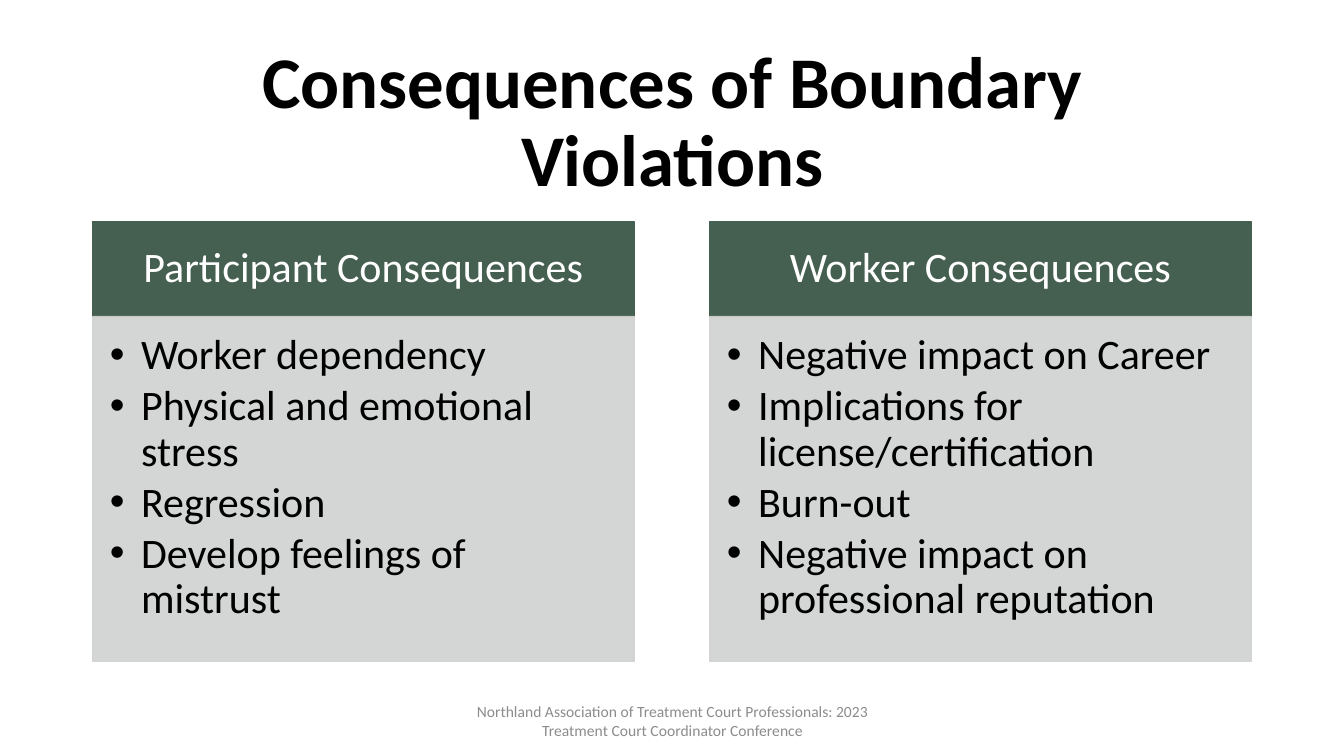
from dataclasses import dataclass

from lxml.etree import SubElement
from pptx import Presentation
from pptx.dml.color import RGBColor as Rgb
from pptx.enum.shapes import MSO_SHAPE as Shape
from pptx.enum.text import MSO_ANCHOR as Anchor, MSO_AUTO_SIZE as AutoSize, PP_ALIGN as Align
from pptx.oxml.ns import qn
from pptx.util import Emu, Pt

EMU_PER_PX = 9144  # 100 px to the inch


@dataclass(frozen=True)
class Theme:
    font: str = "Calibri"
    ink: Rgb = Rgb(0x00, 0x00, 0x00)
    header_ink: Rgb = Rgb(0xFF, 0xFF, 0xFF)
    footer_ink: Rgb = Rgb(0x8C, 0x8C, 0x8C)
    header_fill: Rgb = Rgb(0x45, 0x5F, 0x51)
    body_fill: Rgb = Rgb(0xCF, 0xD2, 0xD0)
    body_opacity: int = 90
    title_size: float = 52
    column_size: float = 30
    footer_size: float = 11.1


THEME = Theme()

TITLE = "Consequences of Boundary Violations"
FOOTER = "Northland Association of Treatment Court Professionals: 2023 Treatment Court Coordinator Conference"
COLUMNS = [
    ("Participant Consequences", [
        "Worker dependency",
        "Physical and emotional stress",
        "Regression",
        "Develop feelings of mistrust",
    ]),
    ("Worker Consequences", [
        "Negative impact on Career",
        "Implications for license/certification",
        "Burn-out",
        "Negative impact on professional reputation",
    ]),
]

COLUMN_LEFT, COLUMN_TOP, COLUMN_WIDTH, COLUMN_GAP = 92, 220, 537, 75
HEADER_HEIGHT, BODY_HEIGHT = 94, 342
BULLET_INDENT = 31


def px(length):
    return Emu(length * EMU_PER_PX)


def write(frame, lines, size, color, align, anchor, insets, spacing=1.0, after=0, bold=False):
    """Fill a text frame with one paragraph per line; insets run left, top, right, bottom."""
    frame.text = "\n".join(lines)
    frame.word_wrap = True
    frame.auto_size = AutoSize.NONE
    frame.vertical_anchor = anchor
    frame.margin_left, frame.margin_top, frame.margin_right, frame.margin_bottom = map(px, insets)
    for paragraph in frame.paragraphs:
        paragraph.alignment = align
        paragraph.line_spacing = spacing
        paragraph.space_before = Pt(0)
        paragraph.space_after = Pt(after)
        for run in paragraph.runs:
            run.font.name = THEME.font
            run.font.size = Pt(size)
            run.font.bold = bold
            run.font.color.rgb = color


def add_bullets(frame):
    for paragraph in frame.paragraphs:
        properties = paragraph._p.get_or_add_pPr()
        properties.set("marL", str(px(BULLET_INDENT)))
        properties.set("indent", str(-px(BULLET_INDENT)))
        SubElement(properties, qn("a:buFont"), typeface="Arial")
        SubElement(properties, qn("a:buChar"), char="•")


def add_panel(slide, left, top, width, height, color, opacity=100):
    panel = slide.shapes.add_shape(Shape.RECTANGLE, px(left), px(top), px(width), px(height))
    panel.shadow.inherit = False
    panel.fill.solid()
    panel.fill.fore_color.rgb = color
    panel.line.color.rgb = color
    panel.line.width = Pt(1)
    if opacity < 100:
        for tint in panel._element.spPr.iter(qn("a:srgbClr")):
            SubElement(tint, qn("a:alpha"), val=str(opacity * 1000))
    return panel


def add_title(slide):
    title = slide.shapes.title
    title.left, title.top, title.width, title.height = map(px, (92, 61, 1150, 124))
    write(title.text_frame, [TITLE], THEME.title_size, THEME.ink, Align.CENTER,
          Anchor.MIDDLE, (20, 5, 20, 5), spacing=0.9, bold=True)


def add_column(slide, left, heading, consequences):
    header = add_panel(slide, left, COLUMN_TOP, COLUMN_WIDTH, HEADER_HEIGHT, THEME.header_fill)
    write(header.text_frame, [heading], THEME.column_size, THEME.header_ink, Align.CENTER,
          Anchor.MIDDLE, (23, 13, 23, 13), spacing=0.9)
    body = add_panel(slide, left, COLUMN_TOP + HEADER_HEIGHT, COLUMN_WIDTH, BODY_HEIGHT,
                     THEME.body_fill, THEME.body_opacity)
    write(body.text_frame, consequences, THEME.column_size, THEME.ink, Align.LEFT,
          Anchor.TOP, (17, 17, 23, 26), spacing=0.9, after=4)
    add_bullets(body.text_frame)


def add_footer(slide):
    footer = slide.shapes.add_textbox(px(442), px(695), px(450), px(40))
    write(footer.text_frame, [FOOTER], THEME.footer_size, THEME.footer_ink, Align.CENTER,
          Anchor.MIDDLE, (10, 5, 10, 5))


def main():
    deck = Presentation()
    deck.slide_width, deck.slide_height = px(1333), px(750)
    slide = deck.slides.add_slide(deck.slide_layouts[5])
    add_title(slide)
    add_footer(slide)
    for index, (heading, consequences) in enumerate(COLUMNS):
        left = COLUMN_LEFT + index * (COLUMN_WIDTH + COLUMN_GAP)
        add_column(slide, left, heading, consequences)
    deck.save("out.pptx")


if __name__ == "__main__":
    main()
